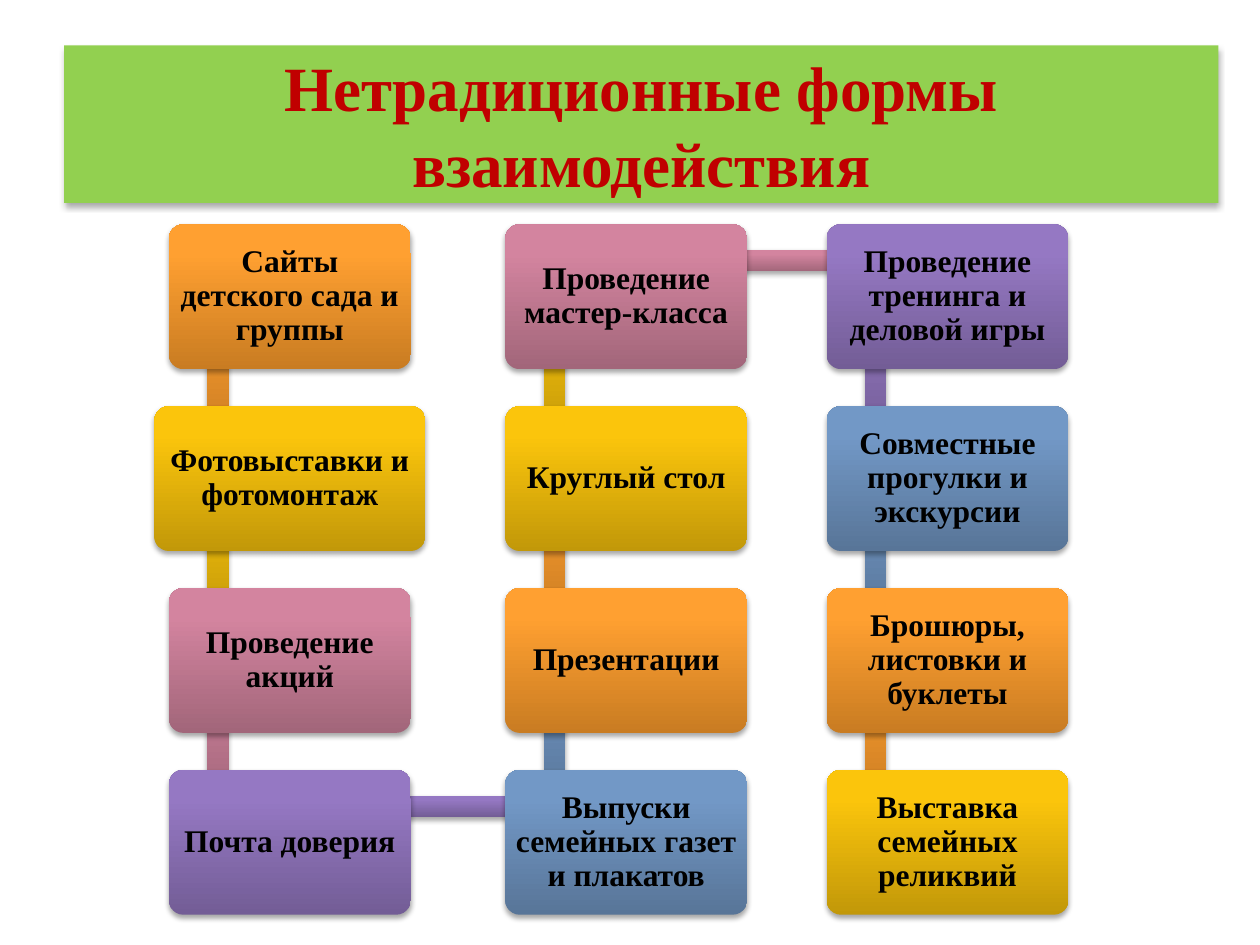
from lxml import etree
from pptx import Presentation
from pptx.dml.color import RGBColor
from pptx.enum import shapes, text
from pptx.oxml.ns import qn
from pptx.util import Inches, Pt

FONT = "Times New Roman"
# (bottom, top) shades, repeated along the chain
SHADES = [("C97C22", "FFA031"), ("C29809", "FBC50C"), ("A2667A", "D3849F"),
          ("735D96", "9578C3"), ("587598", "7298C6")]
# Each column is listed in the order the chain runs: down, up, down
COLUMNS = [
    ["Сайты детского сада и группы", "Фотовыставки и фотомонтаж",
     "Проведение акций", "Почта доверия"],
    ["Выпуски семейных газет и плакатов", "Презентации",
     "Круглый стол", "Проведение мастер-класса"],
    ["Проведение тренинга и деловой игры", "Совместные прогулки и экскурсии",
     "Брошюры, листовки и буклеты", "Выставка семейных реликвий"],
]
COLUMN_OFFSETS = [0, 2.67, 5.22]
CARD_W, CARD_H = 1.92, 1.15
WIDE_CARD, WIDE_W = 1, 2.15
BAR = 0.17
JOINT = 0.29  # depth below a card's top where the bars meet
JOINT_X = 0.39


def rgb(value):
    return RGBColor.from_string(value)


def add_shadow(sp, blur, dist, opacity):
    sp.shadow.inherit = False
    effects = sp._element.spPr.find(qn("a:effectLst"))
    outer = etree.SubElement(effects, qn("a:outerShdw"), blurRad=str(Pt(blur)),
                             dist=str(Pt(dist)), dir="5400000", rotWithShape="0")
    color = etree.SubElement(outer, qn("a:srgbClr"), val="000000")
    etree.SubElement(color, qn("a:alpha"), val=str(opacity * 1000))


def write(sp, wording, size, color, margin_x, margin_y, spacing=1.0):
    tf = sp.text_frame
    tf.word_wrap = True
    tf.auto_size = text.MSO_AUTO_SIZE.NONE
    tf.vertical_anchor = text.MSO_ANCHOR.MIDDLE
    tf.margin_left = tf.margin_right = Inches(margin_x)
    tf.margin_top = tf.margin_bottom = Inches(margin_y)
    p = tf.paragraphs[0]
    p.alignment = text.PP_ALIGN.CENTER
    p.line_spacing = spacing
    r = p.add_run()
    r.text = wording
    r.font.name, r.font.size, r.font.bold = FONT, Pt(size), True
    r.font.color.rgb = rgb(color)


def add_shaded(s, kind, x, y, w, h, shades):
    """Add a shape shaded from bottom to top."""
    sp = s.shapes.add_shape(kind, Inches(x), Inches(y), Inches(w), Inches(h))
    sp.fill.gradient()
    sp.fill.gradient_angle = 90
    for stop, position, color in zip(sp.fill.gradient_stops, (0, 0.8), shades):
        stop.position = position
        stop.color.rgb = rgb(color)
    sp.line.fill.background()
    add_shadow(sp, 3.1, 1.8, 35)
    return sp


def add_title(s, x, y, w, h):
    sp = s.shapes.title
    sp.left, sp.top, sp.width, sp.height = (Inches(v) for v in (x, y, w, h))
    sp.fill.solid()
    sp.fill.fore_color.rgb = rgb("92D050")
    add_shadow(sp, 3.5, 2.2, 32)
    write(sp, "Нетрадиционные формы взаимодействия", 36, "C00000", 0.1, 0.05)


def add_bar(s, start, end, shades):
    """Join two cards, given by their top left corners, with a straight bar."""
    (x1, y1), (x2, y2) = start, end
    x, y = min(x1, x2) + JOINT_X, min(y1, y2) + JOINT
    if x1 == x2:
        box = x - BAR / 2, y, BAR, abs(y2 - y1)
    else:
        box = x, y - BAR / 2, abs(x2 - x1), BAR
    add_shaded(s, shapes.MSO_SHAPE.RECTANGLE, *box, shades)


def add_card(s, x, y, w, wording, shades):
    sp = add_shaded(s, shapes.MSO_SHAPE.ROUNDED_RECTANGLE, x, y, w, CARD_H, shades)
    sp.adjustments[0] = 0.1
    write(sp, wording, 18, "000000", 0.04, 0.04, spacing=0.9)


def add_chain(s, left, top, height):
    """Lay the cards out as a snake: down, up and down again."""
    places, wordings = [], []
    for col, (offset, column) in enumerate(zip(COLUMN_OFFSETS, COLUMNS)):
        pitch = (height - CARD_H) / (len(column) - 1)
        rows = [top + pitch * row for row in range(len(column))]
        places += [(left + offset, y) for y in (reversed(rows) if col % 2 else rows)]
        wordings += column
    for i, ((x, y), wording) in enumerate(zip(places, wordings)):
        shades = SHADES[i % len(SHADES)]
        if i + 1 < len(places):
            add_bar(s, (x, y), places[i + 1], shades)
        w = WIDE_W if i == WIDE_CARD else CARD_W
        add_card(s, x - (w - CARD_W) / 2, y, w, wording, shades)


def main():
    prs = Presentation()
    prs.slide_width, prs.slide_height = Inches(10), Inches(7.5)
    s = prs.slides.add_slide(prs.slide_layouts[5])
    add_title(s, 0.51, 0.36, 9.16, 1.25)
    add_chain(s, 1.34, 1.78, 5.48)
    prs.save("out.pptx")


if __name__ == "__main__":
    main()
